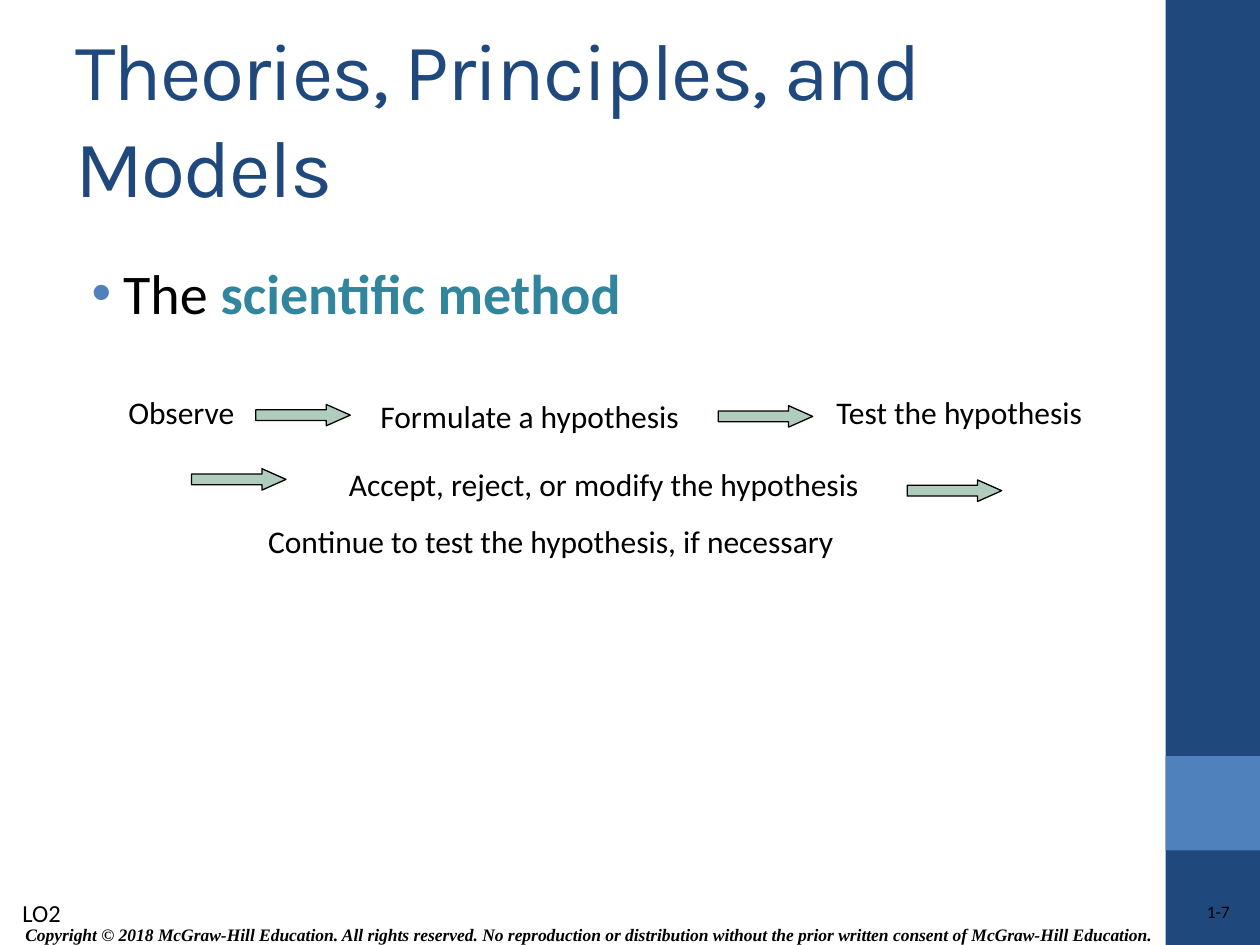
from lxml import etree
from pptx import Presentation
from pptx.dml.color import RGBColor
from pptx.enum.shapes import MSO_SHAPE
from pptx.enum.text import MSO_ANCHOR, PP_ALIGN
from pptx.oxml.ns import qn
from pptx.util import Inches, Pt

RECTANGLE, RIGHT_ARROW = MSO_SHAPE.RECTANGLE, MSO_SHAPE.RIGHT_ARROW
TOP, MIDDLE = MSO_ANCHOR.TOP, MSO_ANCHOR.MIDDLE
LEFT, CENTER, RIGHT = PP_ALIGN.LEFT, PP_ALIGN.CENTER, PP_ALIGN.RIGHT
COLORS = {
    "navy": "1F497D",
    "blue": "4F81BD",
    "teal": "31859C",
    "sage": "B0CCBD",
    "black": "000000",
}
TITLE = {"name": "Karla", "size": Pt(46)}
BODY = {"name": "Calibri", "size": Pt(32)}
STEP = {"name": "Calibri", "size": Pt(18)}
OBJECTIVE = {"name": "Calibri", "size": Pt(14)}
NUMBER = {"name": "Calibri", "size": Pt(10)}
COPYRIGHT = {"name": "Times New Roman", "size": Pt(10), "bold": True, "italic": True}
ARROW_SIZE = (0.75, 0.17)
STEPS = [
    ("Observe", 0, 0, 1.17),
    ("Formulate a hypothesis", 2, 0.03, 2.64),
    ("Test the hypothesis", 5.62, 0, 2.5),
    ("Accept, reject, or modify the hypothesis", 1.75, 0.57, 4.38),
    ("Continue to test the hypothesis, if necessary", 1.11, 1.02, 5.17),
]
ARROWS = [(1.11, 0.14), (4.78, 0.15), (6.28, 0.74), (0.6, 0.65)]


def rgb(color):
    """Return the named colour."""
    return RGBColor.from_string(COLORS[color])


def add_run(paragraph, text, formats, color="black"):
    """Append a formatted run to a paragraph."""
    run = paragraph.add_run()
    run.text = text
    for name, value in formats.items():
        setattr(run.font, name, value)
    run.font.color.rgb = rgb(color)
    return run


def add_text_box(slide, box, anchor=TOP, align=LEFT, wrap=True):
    """Add an empty text box and return its frame and first paragraph."""
    frame = slide.shapes.add_textbox(*map(Inches, box)).text_frame
    frame.word_wrap = wrap
    frame.vertical_anchor = anchor
    paragraph = frame.paragraphs[0]
    paragraph.alignment = align
    return frame, paragraph


def add_filled_shape(slide, kind, box, fill, line=None):
    """Add a flat preset shape with an optional outline."""
    shape = slide.shapes.add_shape(kind, *map(Inches, box))
    shape.shadow.inherit = False
    shape.fill.solid()
    shape.fill.fore_color.rgb = rgb(fill)
    if line:
        shape.line.color.rgb = rgb(line)
        shape.line.width = Pt(0.75)
    else:
        shape.line.fill.background()
    return shape


def add_sidebar(slide, left, top, width, height):
    """Draw the side band with its square accent."""
    add_filled_shape(slide, RECTANGLE, (left, top, width, height), "navy")
    accent_top = top + height - 2 * width
    add_filled_shape(slide, RECTANGLE, (left, accent_top, width, width), "blue")


def add_footer(slide, left, top, width):
    """Place the objective, copyright line and slide number."""
    paragraph = add_text_box(slide, (left + 0.02, top, 0.53, 0.34))[1]
    add_run(paragraph, "LO2", OBJECTIVE)
    box = (left, top + 0.2, width - 0.48, 0.28)
    paragraph = add_text_box(slide, box, MIDDLE, CENTER, False)[1]
    add_run(
        paragraph,
        "Copyright © 2018 McGraw-Hill Education. All rights reserved. "
        "No reproduction or distribution without the prior written consent "
        "of McGraw-Hill Education.",
        COPYRIGHT,
    )
    box = (left + width - 1.95, top + 0.07, 1.95, 0.2)
    frame, paragraph = add_text_box(slide, box, align=RIGHT)
    for side in ("left", "top", "right", "bottom"):
        setattr(frame, f"margin_{side}", 0)
    paragraph.line_spacing = 1.02
    add_run(paragraph, "1-7", NUMBER)


def add_title(slide, box):
    """Place the slide title with tightened letter spacing."""
    paragraph = add_text_box(slide, box, MIDDLE)[1]
    run = add_run(paragraph, "Theories, Principles, and Models", TITLE, "navy")
    run._r.get_or_add_rPr().set("spc", "-100")


def add_topic(slide, box):
    """Place the bulleted topic line."""
    paragraph = add_text_box(slide, box)[1]
    properties = paragraph._p.get_or_add_pPr()
    properties.set("marL", str(Inches(0.38)))
    properties.set("indent", str(Inches(-0.25)))
    bullet_color = etree.SubElement(properties, qn("a:buClr"))
    etree.SubElement(bullet_color, qn("a:srgbClr"), val=COLORS["blue"])
    etree.SubElement(properties, qn("a:buFont"), typeface="Arial")
    etree.SubElement(properties, qn("a:buChar"), char="•")
    add_run(paragraph, "The ", BODY)
    add_run(paragraph, "scientific method", {**BODY, "bold": True}, "teal")


def add_method_flow(slide, left, top):
    """Draw the steps of the method and the arrows between them."""
    for x, y in ARROWS:
        box = (left + x, top + y, *ARROW_SIZE)
        arrow = add_filled_shape(slide, RIGHT_ARROW, box, "sage", "black")
        arrow.adjustments[0] = 0.5
        arrow.adjustments[1] = 1.125
    for text, x, y, width in STEPS:
        paragraph = add_text_box(slide, (left + x, top + y, width, 0.4))[1]
        add_run(paragraph, text, STEP)


def main():
    """Build and save the slide."""
    presentation = Presentation()
    presentation.slide_width = Inches(10)
    presentation.slide_height = Inches(7.5)
    slide = presentation.slides.add_slide(presentation.slide_layouts[6])
    add_sidebar(slide, 9.25, 0, 0.75, 7.5)
    add_footer(slide, 0.06, 7.08, 9.7)
    add_title(slide, (0.5, 0.3, 8.33, 1.25))
    add_topic(slide, (0.5, 2, 9, 0.75))
    add_method_flow(slide, 0.92, 3.07)
    presentation.save("out.pptx")


if __name__ == "__main__":
    main()
